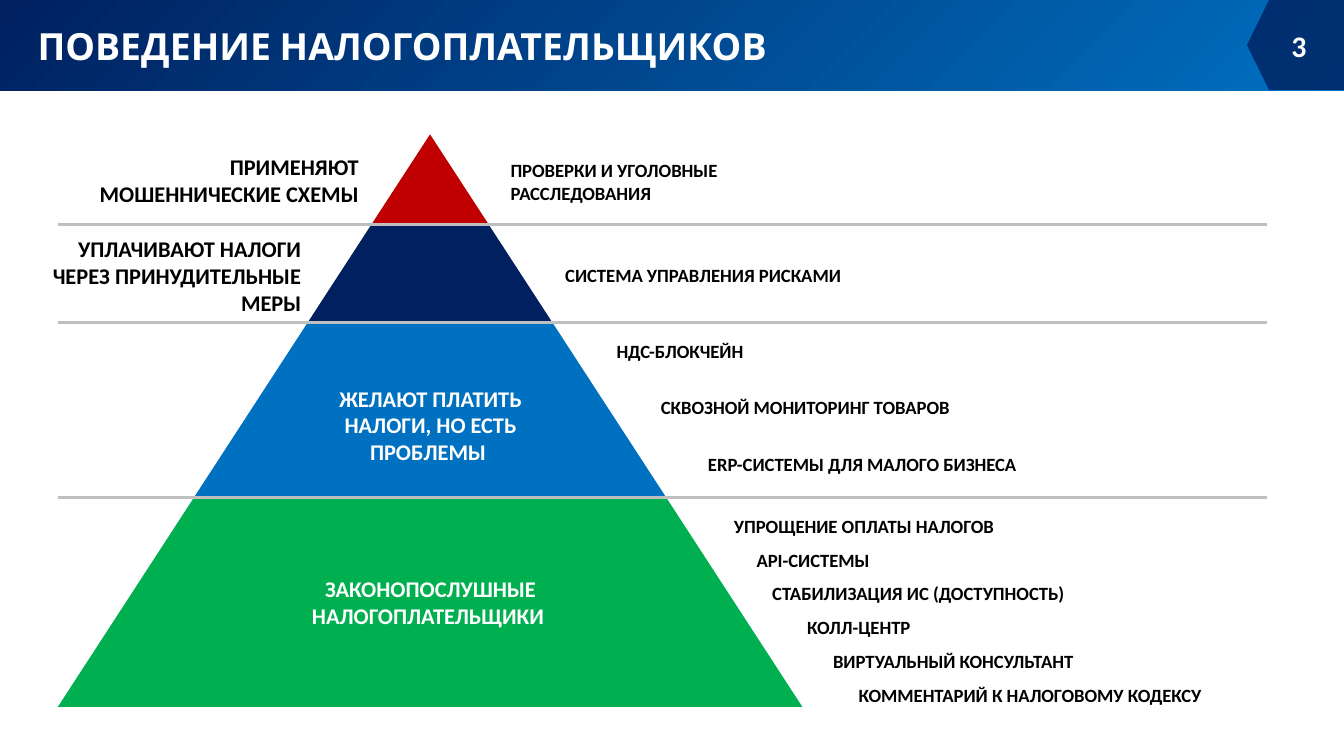
from lxml.etree import SubElement
from pptx import Presentation
from pptx.dml.color import RGBColor
from pptx.enum.shapes import MSO_CONNECTOR, MSO_SHAPE
from pptx.enum.text import MSO_ANCHOR, PP_ALIGN
from pptx.oxml.ns import qn
from pptx.util import Pt

WHITE, BLACK, NAVY, BLUE = "FFFFFF", "000000", "002060", "0070C0"
LEFT, RIGHT, MID = PP_ALIGN.LEFT, PP_ALIGN.RIGHT, PP_ALIGN.CENTER

# Pyramid: apex, half the base, and the heights where the tiers meet
APEX, HALF = 230.4, 199.4
LEVELS = [72, 120.2, 172.8, 266.4, 378.7]
TIERS = ["C00000", NAVY, BLUE, "00B050"]

# Left, top, width, height, align, colour, text
GROUPS = [
    (32.4, 78.5, 167, 36.3, RIGHT, BLACK, "ПРИМЕНЯЮТ МОШЕННИЧЕСКИЕ СХЕМЫ"),
    (15.1, 122.4, 153.4, 50.9, RIGHT, BLACK,
     "УПЛАЧИВАЮТ НАЛОГИ ЧЕРЕЗ ПРИНУДИТЕЛЬНЫЕ МЕРЫ"),
    (154, 202.6, 153.4, 50.9, MID, WHITE,
     "ЖЕЛАЮТ ПЛАТИТЬ НАЛОГИ, НО ЕСТЬ ПРОБЛЕМЫ "),
    (154, 304.8, 153.4, 36.3, MID, WHITE, "ЗАКОНОПОСЛУШНЫЕ НАЛОГОПЛАТЕЛЬЩИКИ "),
]

# Left, top, width, text
TOOLS = [
    (266.4, 81.6, 180.7, "ПРОВЕРКИ И УГОЛОВНЫЕ РАССЛЕДОВАНИЯ"),
    (295.7, 137.8, 180.7, "СИСТЕМА УПРАВЛЕНИЯ РИСКАМИ"),
    (323.2, 178.7, 106.6, "НДС-БЛОКЧЕЙН"),
    (347, 208.8, 180.7, "СКВОЗНОЙ МОНИТОРИНГ ТОВАРОВ"),
    (372.2, 239.2, 245.5, "ERP-СИСТЕМЫ ДЛЯ МАЛОГО БИЗНЕСА"),
    (386.1, 272.3, 200.9, "УПРОЩЕНИЕ ОПЛАТЫ НАЛОГОВ"),
    (398.2, 290.4, 90, "API-СИСТЕМЫ"),
    (406.6, 308.4, 180.7, "СТАБИЛИЗАЦИЯ ИС (ДОСТУПНОСТЬ)"),
    (425.3, 326.6, 180.7, "КОЛЛ-ЦЕНТР"),
    (439.2, 344.8, 180.7, "ВИРТУАЛЬНЫЙ КОНСУЛЬТАНТ"),
    (452.9, 363, 226.8, "КОММЕНТАРИЙ К НАЛОГОВОМУ КОДЕКСУ"),
]


def rgb(code):
    return RGBColor.from_string(code)


def paint(shape, code):
    shape.shadow.inherit = False
    shape.line.fill.background()
    shape.fill.solid()
    shape.fill.fore_color.rgb = rgb(code)


def label(slide, text, x, y, w, h, size, code=BLACK, align=LEFT,
          font="Calibri", wrap=True, anchor=MSO_ANCHOR.TOP):
    frame = slide.shapes.add_textbox(Pt(x), Pt(y), Pt(w), Pt(h)).text_frame
    frame.word_wrap = wrap
    frame.vertical_anchor = anchor
    para = frame.paragraphs[0]
    para.text = text
    para.alignment = align
    para.font.name = font
    para.font.size = Pt(size)
    para.font.bold = True
    para.font.color.rgb = rgb(code)


def header(slide):
    band = slide.shapes.add_shape(MSO_SHAPE.RECTANGLE, 0, 0, Pt(720), Pt(48.5))
    band.shadow.inherit = False
    band.line.fill.background()
    band.fill.gradient()
    band.fill.gradient_angle = 315
    for stop, code in zip(band.fill.gradient_stops, (NAVY, BLUE)):
        stop.color.rgb = rgb(code)
    label(slide, "ПОВЕДЕНИЕ НАЛОГОПЛАТЕЛЬЩИКОВ", 13, 8.6, 417, 31.5, 20,
          WHITE, font="Cabin", wrap=False)

    # Page number on a see-through tag
    tag = slide.shapes.add_shape(MSO_SHAPE.PENTAGON, Pt(668), 0, Pt(52), Pt(48.2))
    tag.rotation = 180
    tag.adjustments[0] = 0.245
    paint(tag, NAVY)
    tint = tag.fill._xPr.find(qn("a:solidFill"))[0]
    SubElement(tint, qn("a:alpha"), val="80000")
    label(slide, "3", 668, 13.7, 39, 21.6, 16, WHITE, RIGHT,
          anchor=MSO_ANCHOR.MIDDLE)


def tier(slide, top, base, code):
    def reach(y):
        return HALF * (y - LEVELS[0]) / (LEVELS[-1] - LEVELS[0])

    a, b = reach(top), reach(base)
    dots = [(APEX + a, top), (APEX + b, base), (APEX - b, base)]
    if a:
        dots.append((APEX - a, top))
    dots = [(Pt(x), Pt(y)) for x, y in dots]
    pen = slide.shapes.build_freeform(*dots[0])
    pen.add_line_segments(dots[1:], close=True)
    paint(pen.convert_to_shape(), code)


def rule(slide, y):
    line = slide.shapes.add_connector(
        MSO_CONNECTOR.STRAIGHT, Pt(31), Pt(y), Pt(679), Pt(y))
    line.line.color.rgb = rgb("BFBFBF")
    line.line.width = Pt(1.5)
    SubElement(line._element.spPr, qn("a:effectLst"))


def main():
    deck = Presentation()
    deck.slide_width, deck.slide_height = Pt(720), Pt(405)
    slide = deck.slides.add_slide(deck.slide_layouts[6])

    header(slide)

    # Pyramid and its dividers
    for top, base, code in zip(LEVELS, LEVELS[1:], TIERS):
        tier(slide, top, base, code)
    for y in LEVELS[1:-1]:
        rule(slide, y)

    # Taxpayer groups, then the tools for each
    for x, y, w, h, align, code, text in GROUPS:
        label(slide, text, x, y, w, h, 12, code, align)
    for i, (x, y, w, text) in enumerate(TOOLS):
        label(slide, text, x, y, w, 19.4 if i else 31.5, 10)

    deck.save("out.pptx")


if __name__ == "__main__":
    main()
